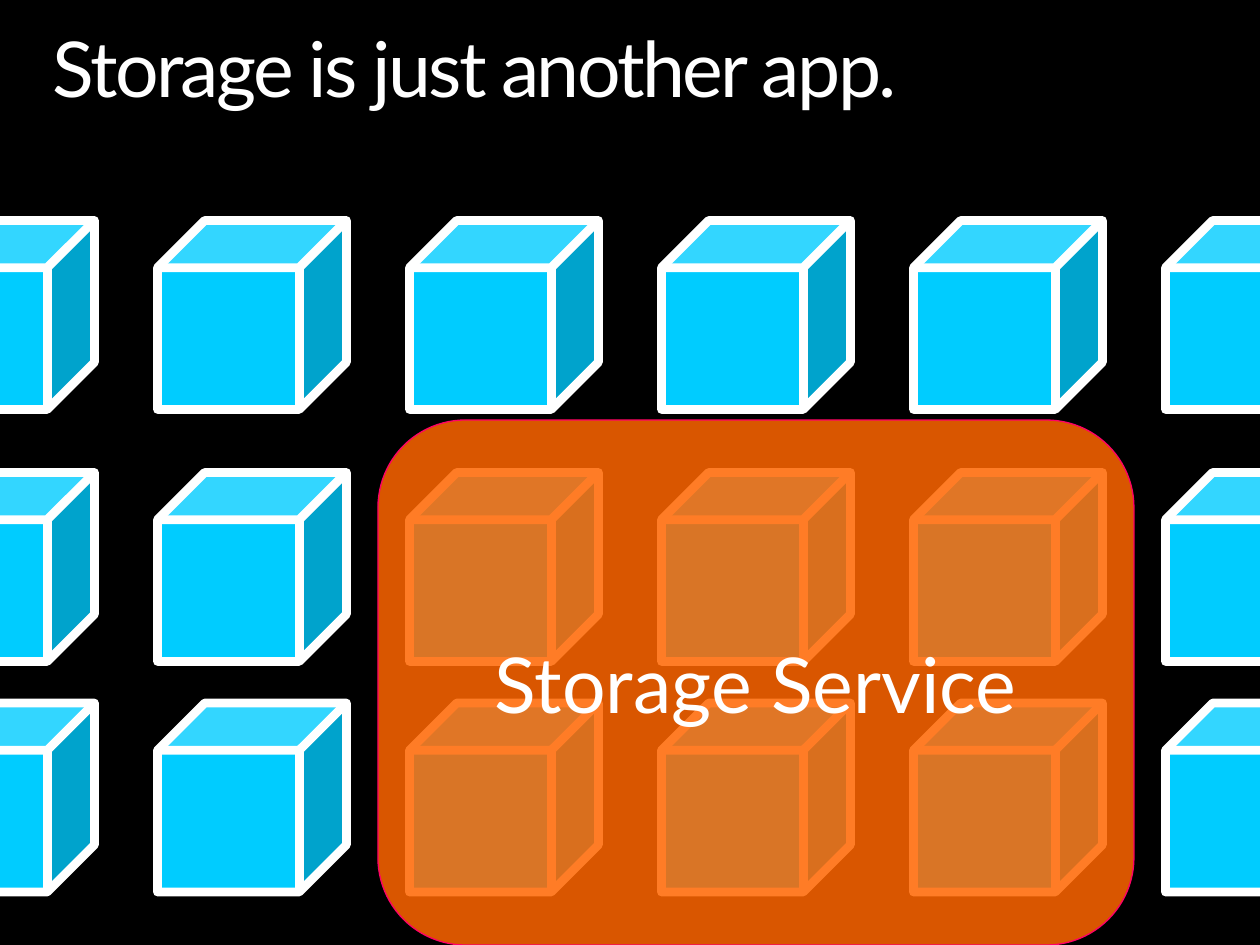
from dataclasses import dataclass

from lxml import etree
from pptx import Presentation
from pptx.dml.color import RGBColor
from pptx.enum.shapes import MSO_SHAPE
from pptx.enum.text import MSO_ANCHOR, PP_ALIGN
from pptx.oxml.ns import qn
from pptx.util import Inches, Pt

CUBE, ROUNDED = MSO_SHAPE.CUBE, MSO_SHAPE.ROUNDED_RECTANGLE
TOP, MIDDLE = MSO_ANCHOR.TOP, MSO_ANCHOR.MIDDLE
LEFT, CENTER = PP_ALIGN.LEFT, PP_ALIGN.CENTER

BLACK = RGBColor(0x00, 0x00, 0x00)
WHITE = RGBColor(0xFF, 0xFF, 0xFF)
CYAN = RGBColor(0x00, 0xCC, 0xFF)
ORANGE = RGBColor(0xFF, 0x66, 0x00)
PINK = RGBColor(0xFF, 0x00, 0x66)

SLIDE_W, SLIDE_H = 10, 7.5
COLUMNS, COLUMN_W, FIRST_COLUMN = 6, SLIDE_W / 5, -0.75
ROW_TOPS = (1.75, 3.75, 5.58)
CUBE_SIZE = 0.75 * COLUMN_W
FONT = {"name": "Lato", "size": Pt(44), "bold": False}


@dataclass(frozen=True)
class Box:
    left: float
    top: float
    width: float
    height: float

    def emu(self) -> tuple:
        return tuple(Inches(v) for v in (self.left, self.top, self.width, self.height))


@dataclass(frozen=True)
class Style:
    preset: int
    fill: RGBColor
    line: RGBColor
    weight: float
    opacity: int = 100


CUBE_STYLE = Style(CUBE, CYAN, WHITE, 5)
SERVICE_STYLE = Style(ROUNDED, ORANGE, PINK, 0.75, 85)


def add_shape(slide, box: Box, style: Style):
    sp = slide.shapes.add_shape(style.preset, *box.emu())
    sp.shadow.inherit = False
    sp.fill.solid()
    sp.fill.fore_color.rgb = style.fill
    sp.line.color.rgb = style.line
    sp.line.width = Pt(style.weight)
    if style.opacity < 100:
        color = sp._element.spPr.find(qn("a:solidFill")).find(qn("a:srgbClr"))
        etree.SubElement(color, qn("a:alpha"), val=str(style.opacity * 1000))
    return sp


def write(sp, text: str, frame: dict, paragraph: dict, spacing: float = 0) -> None:
    tf = sp.text_frame
    p = tf.paragraphs[0]
    r = p.add_run()
    r.text = text
    for target, values in ((tf, frame), (p, paragraph), (r.font, FONT)):
        for name, value in values.items():
            setattr(target, name, value)
    r.font.color.rgb = WHITE
    if spacing:
        r._r.get_or_add_rPr().set("spc", str(round(spacing * 100)))


def main() -> None:
    prs = Presentation()
    prs.slide_width, prs.slide_height = Inches(SLIDE_W), Inches(SLIDE_H)
    s = prs.slides.add_slide(prs.slide_layouts[6])
    s.background.fill.solid()
    s.background.fill.fore_color.rgb = BLACK

    title = s.shapes.add_textbox(*Box(0.42, 0.25, 9.17, 0.73).emu())
    margins = dict.fromkeys(
        ("margin_left", "margin_top", "margin_right", "margin_bottom"), 0)
    write(title, "Storage is just another app.",
          {"word_wrap": True, "vertical_anchor": TOP, **margins},
          {"alignment": LEFT, "line_spacing": 0.9}, spacing=-1.5)

    for top in ROW_TOPS:
        for column in range(COLUMNS):
            left = FIRST_COLUMN + column * COLUMN_W
            add_shape(s, Box(left, top, CUBE_SIZE, CUBE_SIZE), CUBE_STYLE)

    service_top = SLIDE_H * 4 / 9
    service = add_shape(
        s, Box(3, service_top, 3 * COLUMN_W, SLIDE_H - service_top), SERVICE_STYLE)
    write(service, "Storage Service",
          {"word_wrap": True, "vertical_anchor": MIDDLE}, {"alignment": CENTER})

    prs.save("out.pptx")


if __name__ == "__main__":
    main()
